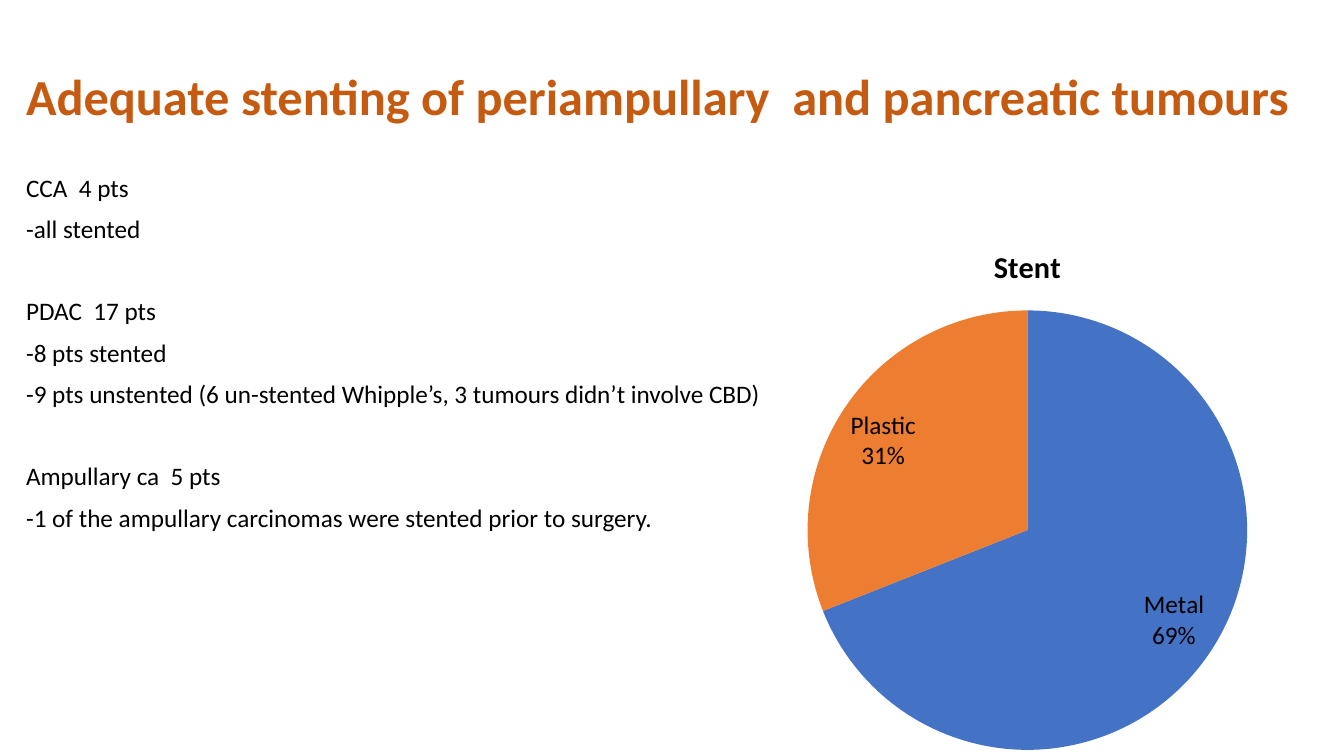
from lxml.etree import SubElement
from pptx import Presentation
from pptx.chart.data import CategoryChartData as ChartData
from pptx.dml.color import RGBColor
from pptx.enum.chart import XL_CHART_TYPE as Kind, XL_LABEL_POSITION as Spot
from pptx.oxml import parse_xml
from pptx.oxml.ns import nsdecls, qn
from pptx.util import Pt

PX = 9144  # 100 px to the inch
FACE = "Calibri"
BLACK, RUST = "000000", "C55A11"
GROUPS = [
    ["CCA  4 pts", "-all stented"],
    ["PDAC  17 pts", "-8 pts stented",
     "-9 pts unstented (6 un-stented Whipple’s, 3 tumours didn’t involve CBD)"],
    ["Ampullary ca  5 pts",
     "-1 of the ampullary carcinomas were stented prior to surgery."],
]
STENTS = {"Metal": (69, "4472C4"), "Plastic": (31, "ED7D31")}


def color(code):
    return RGBColor.from_string(code)


def style(font, size, code=BLACK, bold=False):
    font.name, font.size, font.bold = FACE, Pt(size), bold
    font.color.rgb = color(code)


def emu(box):
    return [n * PX for n in box]


def add_text(slide, box, lines, size, code=BLACK, bold=False):
    """Lines are pairs of text and space before in points."""
    frame = slide.shapes.add_textbox(*emu(box)).text_frame
    frame.word_wrap = True
    for i, (text, gap) in enumerate(lines):
        para = frame.add_paragraph() if i else frame.paragraphs[0]
        para.text = text
        para.line_spacing = 0.9
        para.space_before = Pt(gap)
        style(para.runs[0].font, size, code, bold)


def add_notes(slide, box):
    # A wider gap opens each group after the first
    lines = [(text, 10 if i else 39.5)
             for group in GROUPS for i, text in enumerate(group)]
    lines[0] = (lines[0][0], 0)
    add_text(slide, box, lines, 18)


def add_pie(slide, box):
    data = ChartData()
    data.categories = list(STENTS)
    data.add_series("Stent", [val for val, _ in STENTS.values()])
    chart = slide.shapes.add_chart(Kind.PIE, *emu(box), data).chart
    style(chart.font, 18)
    chart.has_legend = False

    # Title
    chart.has_title = True
    head = chart.chart_title.text_frame
    head.text = "Stent"
    style(head.paragraphs[0].runs[0].font, 21.6, bold=True)

    # Slices
    plot = chart.plots[0]
    plot.vary_by_categories = True
    series = plot.series[0]
    for i, (_, code) in enumerate(STENTS.values()):
        fill = series.points[i].format.fill
        fill.solid()
        fill.fore_color.rgb = color(code)

    # Labels: name above share
    labels = series.data_labels
    labels.show_value = False
    labels.show_category_name = labels.show_percentage = True
    labels.position = Spot.INSIDE_END
    style(labels.font, 18)
    root = series._element.find(qn("c:dLbls"))
    mark = parse_xml(f"<c:separator {nsdecls('c')}>\n</c:separator>")
    root.find(qn("c:showBubbleSize")).addnext(mark)

    # Place of the pie as shares of the chart box
    area = chart._chartSpace.find(".//" + qn("c:plotArea"))
    for old in area.findall(qn("c:layout")):
        area.remove(old)
    layout = parse_xml(f"<c:layout {nsdecls('c')}/>")
    area.insert(0, layout)
    manual = SubElement(layout, qn("c:manualLayout"))
    side, top = 436, 86
    wide, high = box[2:]
    rules = {"layoutTarget": "inner", "xMode": "edge", "yMode": "edge",
             "x": (wide - side) / 2 / wide, "y": top / high,
             "w": side / wide, "h": side / high}
    for name, val in rules.items():
        SubElement(manual, qn(f"c:{name}")).set("val", str(val))


def main():
    deck = Presentation()
    deck.slide_width, deck.slide_height = emu((1333, 750))
    slide = deck.slides.add_slide(deck.slide_layouts[6])
    title = "Adequate stenting of periampullary  and pancreatic tumours"
    add_text(slide, (16, 66, 1292, 312), [(title, 0)], 36, RUST, True)
    add_notes(slide, (16, 169, 768, 506))
    add_pie(slide, (647, 222, 744, 535))
    deck.save("out.pptx")


if __name__ == "__main__":
    main()
